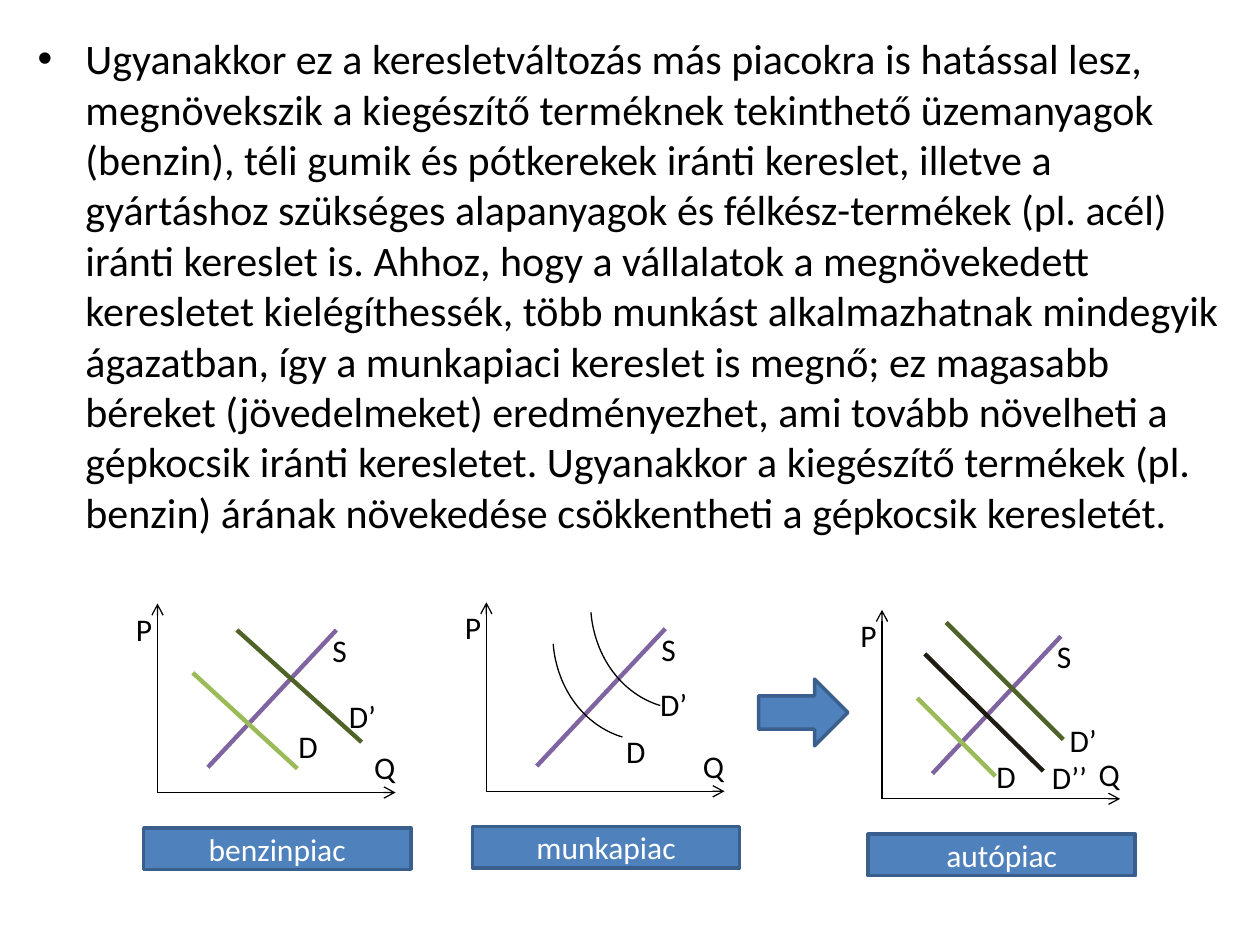
from dataclasses import dataclass
from typing import Any

from lxml import etree
from pptx import Presentation
from pptx import util as u
from pptx.dml import color as dml
from pptx.enum import shapes, text
from pptx.oxml import ns

COLORS = {
    "ink": "000000", "paper": "FFFFFF", "box": "4F81BD", "edge": "3A5F8C",
    "supply": "8064A2", "demand": "9BBB59", "grown": "4F6228", "reduced": "1E1C11",
}
FORMATS = {
    "body": {"size": u.Pt(24), "name": "Calibri"},
    "label": {"size": u.Pt(18), "name": "Calibri"},
}
BODY = (
    "Ugyanakkor ez a keresletváltozás más piacokra is hatással lesz, megnövekszik a "
    "kiegészítő terméknek tekinthető üzemanyagok (benzin), téli gumik és pótkerekek "
    "iránti kereslet, illetve a gyártáshoz szükséges alapanyagok és félkész-termékek "
    "(pl. acél) iránti kereslet is. Ahhoz, hogy a vállalatok a megnövekedett keresletet "
    "kielégíthessék, több munkást alkalmazhatnak mindegyik ágazatban, így a munkapiaci "
    "kereslet is megnő; ez magasabb béreket (jövedelmeket) eredményezhet, ami tovább "
    "növelheti a gépkocsik iránti keresletet. Ugyanakkor a kiegészítő termékek (pl. "
    "benzin) árának növekedése csökkentheti a gépkocsik keresletét."
)
DEMAND_ARC = [(10.8, -4.3), (7.8, -5.2), (5.6, -8.1), (5.3, -11.7)]
MARKETS = [
    {
        "name": "benzinpiac", "origin": (12.5, 62.9), "arcs": [],
        "lines": [("demand", (2.8, -9.5), (11.1, -1.9)), ("grown", (6.3, -12.9), (16.2, -4))],
        "labels": [("D", 10.2, -5.7), ("D’", 14.2, -8.1)],
    },
    {
        "name": "munkapiac", "origin": (38.6, 62.8), "lines": [],
        "arcs": [DEMAND_ARC, [(x + 3, y - 2.5) for x, y in DEMAND_ARC]],
        "labels": [("D", 10.1, -5.2), ("D’", 12.8, -8.9)],
    },
    {
        "name": "autópiac", "origin": (70, 63.4), "arcs": [],
        "lines": [("demand", (2.8, -8), (9, -1.8)), ("grown", (5.1, -14), (14.4, -4.7)),
                  ("reduced", (3.4, -11.5), (12.8, -2.2))],
        "labels": [("D", 8.1, -3.8), ("D’", 13.9, -6.7), ("D’’", 12.5, -3.7)],
    },
]


@dataclass
class Board:
    slide: Any
    cell: int

    def grid(self, *values):
        return [round(value * self.cell) for value in values]

    def paint(self, target, color):
        target.rgb = dml.RGBColor.from_string(COLORS[color])

    def stroke(self, line, color, width):
        self.paint(line.color, color)
        line.width = u.Pt(width)

    def letter(self, frame, words, style, color):
        paragraph = frame.paragraphs[0]
        run = paragraph.add_run()
        run.text = words
        for key, value in FORMATS[style].items():
            setattr(run.font, key, value)
        self.paint(run.font.color, color)
        return paragraph

    def textbox(self, words, area, style="label"):
        frame = self.slide.shapes.add_textbox(*self.grid(*area)).text_frame
        frame.word_wrap = True
        if style == "label":
            frame.auto_size = text.MSO_AUTO_SIZE.SHAPE_TO_FIT_TEXT
        return self.letter(frame, words, style, "ink")

    def bullet(self, words, area):
        paragraph = self.textbox(words, area, "body")
        paragraph.space_before = u.Pt(4.8)
        props = paragraph._p.get_or_add_pPr()
        indent = u.Inches(0.38)
        for key, value in {"marL": indent, "indent": -indent}.items():
            props.set(key, str(value))
        etree.SubElement(props, ns.qn("a:buFont"), typeface="Arial")
        etree.SubElement(props, ns.qn("a:buChar"), char="•")

    def line(self, start, end, color, width=2.5, arrow=False):
        link = self.slide.shapes.add_connector(
            shapes.MSO_CONNECTOR.STRAIGHT, *self.grid(*start, *end))
        self.stroke(link.line, color, width)
        if arrow:
            etree.SubElement(link.line._get_or_add_ln(), ns.qn("a:tailEnd"), type="arrow")
        etree.SubElement(link._element.spPr, ns.qn("a:effectLst"))

    def arc(self, controls, steps=32):
        points = []
        for step in range(steps + 1):
            t = step / steps
            weights = ((1 - t) ** 3, 3 * t * (1 - t) ** 2, 3 * t * t * (1 - t), t ** 3)
            points.append(self.grid(*(
                sum(w * p[axis] for w, p in zip(weights, controls)) for axis in (0, 1))))
        builder = self.slide.shapes.build_freeform(*points[0])
        builder.add_line_segments(points[1:], close=False)
        curve = builder.convert_to_shape()
        curve.shadow.inherit = False
        curve.fill.background()
        self.stroke(curve.line, "ink", 0.75)

    def block(self, kind, area, words=""):
        block = self.slide.shapes.add_shape(kind, *self.grid(*area))
        block.shadow.inherit = False
        block.fill.solid()
        self.paint(block.fill.fore_color, "box")
        self.stroke(block.line, "edge", 2)
        if words:
            block.text_frame.vertical_anchor = text.MSO_ANCHOR.MIDDLE
            paragraph = self.letter(block.text_frame, words, "label", "paper")
            paragraph.alignment = text.PP_ALIGN.CENTER

    def market(self, name, origin, lines, arcs, labels):
        def at(x, y):
            return origin[0] + x, origin[1] + y

        for tip in ((0, -15), (18.9, 0)):
            self.line(origin, at(*tip), "ink", 0.75, arrow=True)
        for color, start, end in [("supply", (4, -2), (14.2, -12.9)), *lines]:
            self.line(at(*start), at(*end), color)
        for controls in arcs:
            self.arc([at(*point) for point in controls])
        for label, x, y in [("P", -2.7, -15), ("Q", 16.2, -4), ("S", 12.9, -13.3), *labels]:
            self.textbox(label, (*at(x, y), 5.5, 4))
        self.block(shapes.MSO_SHAPE.RECTANGLE, (*at(-1.1, 2.8), 21.2, 3.3), name)


def main():
    deck = Presentation()
    deck.slide_width, deck.slide_height = u.Inches(10), u.Inches(7.5)
    board = Board(deck.slides.add_slide(deck.slide_layouts[6]), deck.slide_width // 100)
    board.bullet(BODY, (2, 2.1, 96.1, 49.5))
    for market in MARKETS:
        board.market(**market)
    board.block(shapes.MSO_SHAPE.RIGHT_ARROW, (60.2, 53.9, 7.1, 5.3))
    deck.save("out.pptx")


if __name__ == "__main__":
    main()
